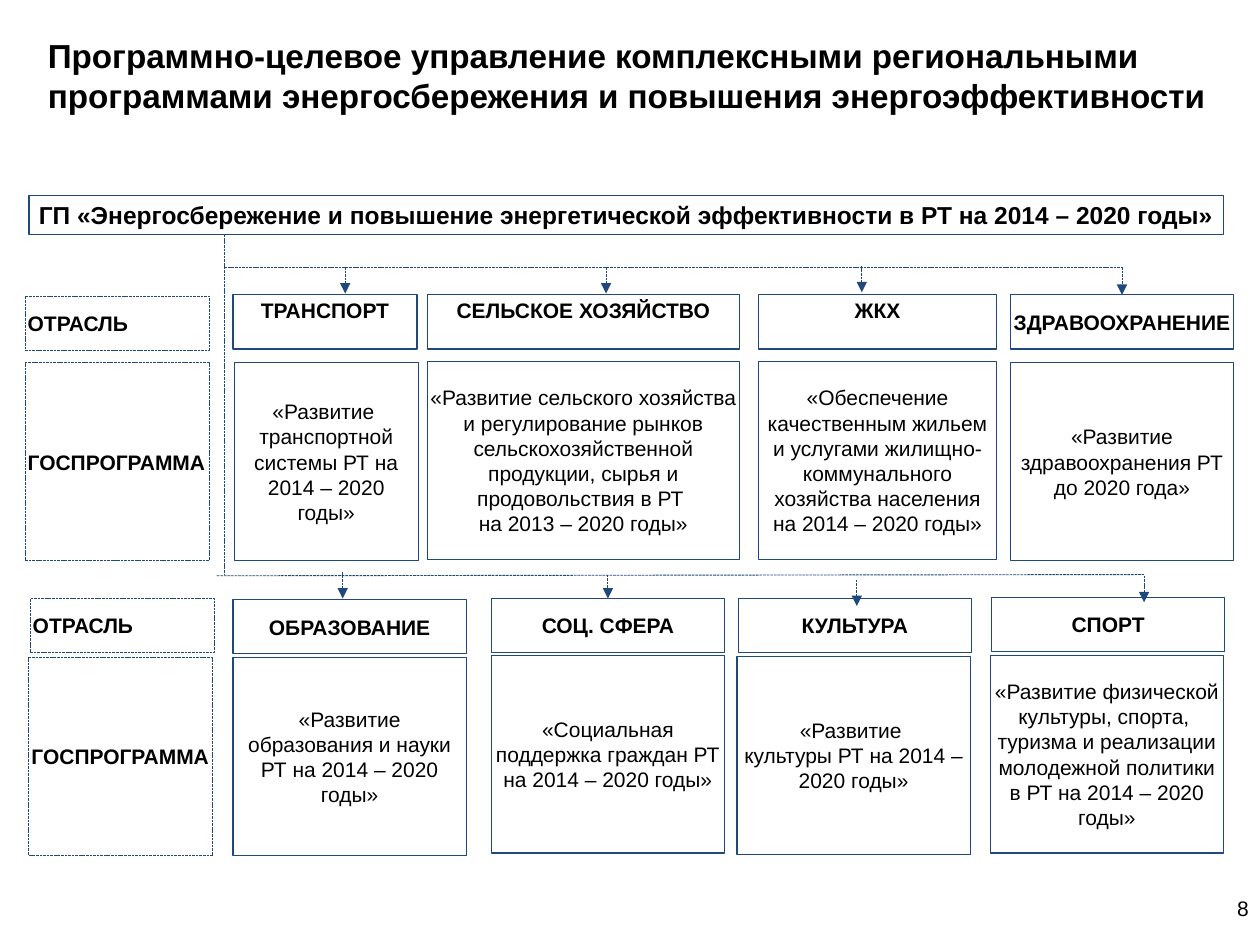
from dataclasses import dataclass
from typing import Optional

from lxml.etree import SubElement
from pptx import Presentation
from pptx.dml.color import RGBColor
from pptx.enum.dml import MSO_LINE
from pptx.enum.shapes import MSO_CONNECTOR, MSO_SHAPE
from pptx.enum.text import MSO_ANCHOR, MSO_AUTO_SIZE, PP_ALIGN
from pptx.oxml.ns import qn
from pptx.util import Inches, Pt

COLORS = {"line": "1F497D", "text": "000000"}
MARGINS = ("margin_left", "margin_top", "margin_right", "margin_bottom")
HEAD_H, PROGRAM_H, ARROW_H = 0.43, 1.57, 0.21


@dataclass
class Box:
    text: str
    x: float
    y: float
    w: float
    h: float
    bold: bool = False
    size: int = 12
    inset: float = 0.02
    align: PP_ALIGN = PP_ALIGN.CENTER
    anchor: MSO_ANCHOR = MSO_ANCHOR.MIDDLE
    dashed: bool = False


@dataclass
class Branch:
    """An industry heading with its state programme below."""
    industry: str
    program: str
    x: float
    y: float
    w: float
    program_x: float
    program_y: float
    anchor: MSO_ANCHOR = MSO_ANCHOR.MIDDLE


@dataclass
class Line:
    x1: float
    y1: float
    x2: float
    y2: float
    arrow: bool = False
    target: Optional[str] = None


def down_arrow(x: float, y: float, target: Optional[str] = None) -> Line:
    return Line(x, y, x, y + ARROW_H, True, target)


TOP = MSO_ANCHOR.TOP
BRANCHES = [
    Branch("ТРАНСПОРТ", "«Развитие \nтранспортной системы РТ на 2014 – 2020 годы»",
           1.85, 2.34, 1.46, 1.86, 2.88, TOP),
    Branch("СЕЛЬСКОЕ ХОЗЯЙСТВО",
           "«Развитие сельского хозяйства и регулирование рынков сельскохозяйственной "
           "продукции, сырья и продовольствия в РТ \vна 2013 – 2020 годы»",
           3.39, 2.34, 2.48, 3.39, 2.87, TOP),
    Branch("ЖКХ",
           "«Обеспечение качественным жильем и услугами жилищно-коммунального "
           "хозяйства населения на 2014 – 2020 годы»",
           6.02, 2.34, 1.89, 6.02, 2.87, TOP),
    Branch("ЗДРАВООХРАНЕНИЕ", "«Развитие здравоохранения РТ до 2020 года»",
           8.02, 2.34, 1.77, 8.02, 2.88),
    Branch("ОБРАЗОВАНИЕ", "«Развитие образования и науки РТ на 2014 – 2020 годы»",
           1.85, 4.76, 1.85, 1.85, 5.22),
    Branch("СОЦ. СФЕРА", "«Социальная поддержка граждан РТ на 2014 – 2020 годы»",
           3.9, 4.75, 1.85, 3.9, 5.2),
    Branch("КУЛЬТУРА", "«Развитие \nкультуры РТ на 2014 – 2020 годы»",
           5.86, 4.75, 1.85, 5.85, 5.21),
    Branch("СПОРТ",
           "«Развитие физической культуры, спорта, \n"
           "туризма и реализации молодежной политики в РТ на 2014 – 2020 годы»",
           7.87, 4.74, 1.85, 7.86, 5.2),
]
ROW_LABELS = [
    Box(text, x, y, 1.46, h, bold=True, align=PP_ALIGN.LEFT, dashed=True)
    for text, x, y, h in (
        ("ОТРАСЛЬ", 0.2, 2.35, HEAD_H), ("ГОСПРОГРАММА", 0.2, 2.88, PROGRAM_H),
        ("ОТРАСЛЬ", 0.24, 4.75, HEAD_H), ("ГОСПРОГРАММА", 0.23, 5.22, PROGRAM_H))
]
LINES = [
    Line(1.78, 1.86, 1.78, 4.56),
    Line(1.78, 2.12, 8.91, 2.12),
    Line(1.72, 4.57, 9.08, 4.56),
    down_arrow(2.74, 2.12),
    down_arrow(4.81, 2.12),
    down_arrow(6.84, 2.11),
    down_arrow(8.9, 2.12, "ЗДРАВООХРАНЕНИЕ"),
    down_arrow(2.72, 4.54),
    down_arrow(4.82, 4.56, "СОЦ. СФЕРА"),
    down_arrow(6.8, 4.6),
    down_arrow(9.08, 4.57),
]


def color(name: str) -> RGBColor:
    return RGBColor.from_string(COLORS[name])


def write(tf, text: str, size: int, bold: bool, align: PP_ALIGN, anchor: MSO_ANCHOR) -> None:
    frame = {"text": text, "word_wrap": True, "auto_size": MSO_AUTO_SIZE.NONE,
             "vertical_anchor": anchor}
    for name, value in frame.items():
        setattr(tf, name, value)
    for p in tf.paragraphs:
        p.alignment = align
        for r in p.runs:
            for name, value in {"name": "Arial", "size": Pt(size), "bold": bold}.items():
                setattr(r.font, name, value)
            r.font.color.rgb = color("text")


def style_line(line, dashed: bool) -> None:
    line.color.rgb = color("line")
    line.width = Pt(0.5 if dashed else 0.75)
    if dashed:
        line.dash_style = MSO_LINE.SQUARE_DOT


def add_box(s, box: Box):
    sp = s.shapes.add_shape(MSO_SHAPE.RECTANGLE, *map(Inches, (box.x, box.y, box.w, box.h)))
    sp.shadow.inherit = False
    sp.fill.background()
    style_line(sp.line, box.dashed)
    for name in MARGINS:
        setattr(sp.text_frame, name, Inches(box.inset))
    write(sp.text_frame, box.text, box.size, box.bold, box.align, box.anchor)
    return sp


def add_branch(s, b: Branch):
    """Draw both boxes and return the industry heading."""
    add_box(s, Box(b.program, b.program_x, b.program_y, b.w, PROGRAM_H))
    return add_box(s, Box(b.industry, b.x, b.y, b.w, HEAD_H, bold=True, anchor=b.anchor))


def add_line(s, line: Line, headings: dict) -> None:
    c = s.shapes.add_connector(
        MSO_CONNECTOR.STRAIGHT, *map(Inches, (line.x1, line.y1, line.x2, line.y2)))
    style_line(c.line, dashed=True)
    if line.arrow:
        SubElement(c.line._get_or_add_ln(), qn("a:tailEnd"), type="triangle")
    SubElement(c._element.spPr, qn("a:effectLst"))
    if line.target:
        c.end_connect(headings[line.target], 0)
        c.begin_x = c.end_x


def main() -> None:
    prs = Presentation()
    prs.slide_width, prs.slide_height = Inches(10), Inches(7.5)
    s = prs.slides.add_slide(prs.slide_layouts[5])

    title = s.shapes.title
    place = {"left": 0.28, "top": 0.2, "width": 9.45, "height": 0.79}
    for name, value in place.items():
        setattr(title, name, Inches(value))
    write(title.text_frame,
          "Программно-целевое управление комплексными региональными программами "
          "энергосбережения и повышения энергоэффективности",
          19, True, PP_ALIGN.LEFT, MSO_ANCHOR.MIDDLE)

    add_box(s, Box("ГП «Энергосбережение и повышение энергетической эффективности "
                   "в РТ на 2014 – 2020 годы»",
                   0.23, 1.55, 9.48, 0.31, bold=True, size=14, inset=0.04))
    headings = {b.industry: add_branch(s, b) for b in BRANCHES}
    for line in LINES:
        add_line(s, line, headings)
    for label in ROW_LABELS:
        add_box(s, label)

    number = s.shapes.add_textbox(*map(Inches, (9.57, 7.01, 0.44, 0.4)))
    write(number.text_frame, "8", 12, False, PP_ALIGN.RIGHT, MSO_ANCHOR.MIDDLE)
    prs.save("out.pptx")


if __name__ == "__main__":
    main()
